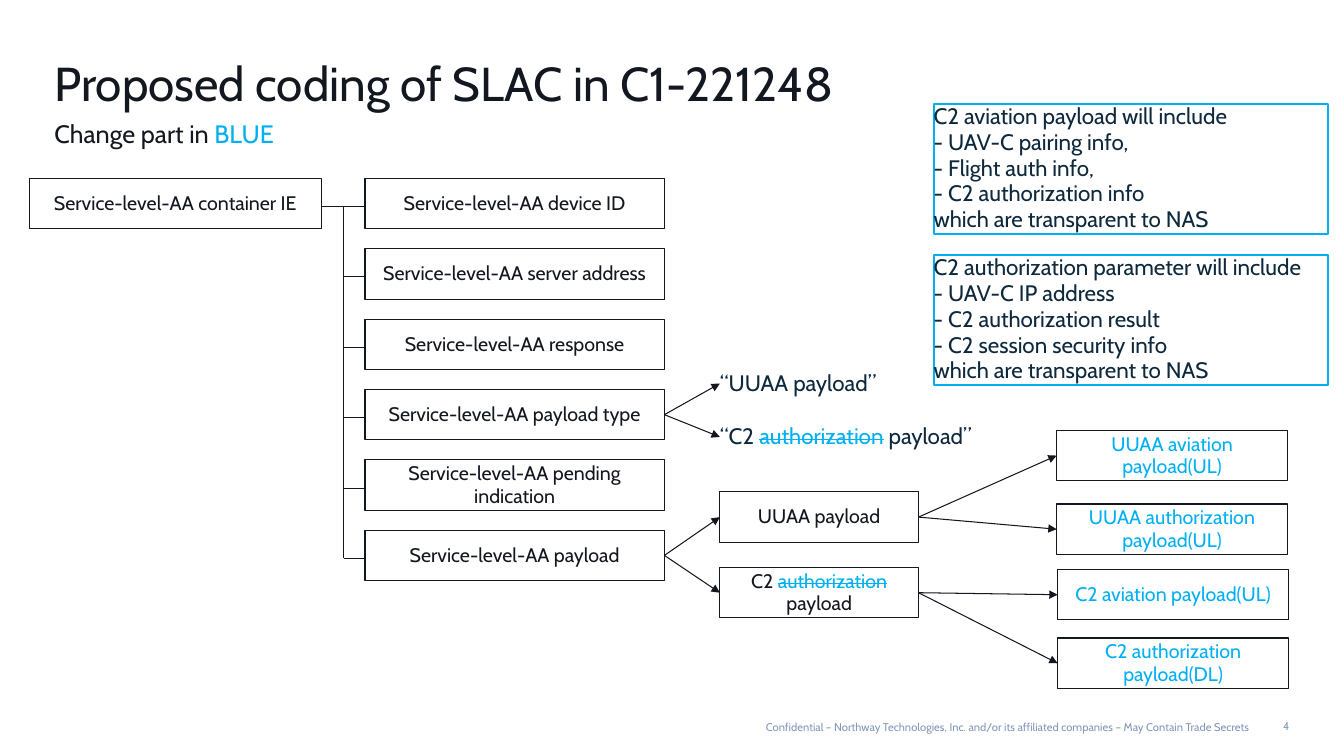
"""Build the slide on the proposed coding of the service-level-AA container."""
from lxml import etree
from pptx import Presentation
from pptx import util as u
from pptx.dml.color import RGBColor
from pptx.enum import shapes, text
from pptx.oxml import ns

INK = RGBColor(0x13, 0x17, 0x1F)
NAVY = RGBColor(0x0E, 0x28, 0x3C)
BLUE = RGBColor(0x00, 0xB0, 0xF0)
GREY = RGBColor(0x84, 0x98, 0xB8)
WHITE = RGBColor(0xFF, 0xFF, 0xFF)
FONT = "Cabin"

TITLE = "Proposed coding of SLAC in C1-221248"
SUBTITLE = "Change part in |BLUE|"
FOOTER = ("Confidential – Northway Technologies, Inc. and/or its affiliated "
          "companies – May Contain Trade Secrets")
PAGE_NUMBER = "4"
CONTAINER = "Service-level-AA container IE"
ELEMENTS = ["device ID", "server address", "response", "payload type",
            "pending indication", "payload"]
PAYLOAD_TYPES = [("“UUAA payload”", 3.68, 2.49),
                 ("“C2 |authorization| payload”", 4.21, 3.1)]
PAYLOADS = [
    ("UUAA payload", 4.88, [("UUAA aviation payload(UL)", 10.48, 4.27),
                            ("UUAA authorization payload(UL)", 10.48, 5.0)]),
    ("C2 |authorization| payload", 5.63, [("C2 aviation payload(UL)", 10.49, 5.65),
                                          ("C2 authorization payload(DL)", 10.49, 6.33)]),
]
NOTES = [
    (1.03, ["C2 aviation payload will include", "- UAV-C pairing info,",
            "- Flight auth info,", "- C2 authorization info",
            "which are transparent to NAS"]),
    (2.53, ["C2 authorization parameter will include", "- UAV-C IP address",
            "- C2 authorization result", "- C2 session security info",
            "which are transparent to NAS"]),
]

BOX_HEIGHT = 0.5
CONTAINER_LEFT, CONTAINER_WIDTH = 0.29, 2.9
ELEMENT_LEFT, ELEMENT_TOP, ELEMENT_WIDTH, ELEMENT_STEP = 3.62, 1.77, 2.97, 0.698
TRUNK_LEFT, BRANCH_DROP = 3.41, 0.28
PAYLOAD_LEFT, PAYLOAD_WIDTH, LEAF_WIDTH = 7.14, 1.97, 2.29

deck = Presentation()
deck.slide_width, deck.slide_height = u.Inches(13.33), u.Inches(7.5)
page = deck.slides.add_slide(deck.slide_layouts[6])


def write(shape, lines, size, color, spacing=0.96, align=text.PP_ALIGN.LEFT,
          strike=True, inset=0, **frame_format):
    """Fill a shape with lines whose parts between bars are blue."""
    frame = shape.text_frame
    settings = {"word_wrap": True, "vertical_anchor": text.MSO_ANCHOR.TOP}
    if not inset:
        settings["auto_size"] = text.MSO_AUTO_SIZE.SHAPE_TO_FIT_TEXT
    for side in ("left", "right"):
        settings["margin_" + side] = u.Inches(inset)
    for side in ("top", "bottom"):
        settings["margin_" + side] = u.Inches(inset / 2)
    for name, value in (settings | frame_format).items():
        setattr(frame, name, value)
    for number, line in enumerate(lines):
        para = frame.add_paragraph() if number else frame.paragraphs[0]
        para.alignment, para.line_spacing = align, spacing
        for index, part in enumerate(line.split("|")):
            if not part:
                continue
            changed = index % 2 == 1
            span = para.add_run()
            span.text = part
            for name, value in {"name": FONT, "size": u.Pt(size)}.items():
                setattr(span.font, name, value)
            span.font.color.rgb = BLUE if changed else color
            if changed and strike:
                span._r.get_or_add_rPr().set("strike", "sngStrike")


def add_text(place, line, size, color, **text_format):
    """Add a text box with one line."""
    box = page.shapes.add_textbox(*map(u.Inches, place))
    write(box, [line], size, color, **text_format)


def add_rectangle(place, line_color, line_width):
    """Add an outlined rectangle without fill."""
    box = page.shapes.add_shape(shapes.MSO_SHAPE.RECTANGLE, *map(u.Inches, place))
    box.shadow.inherit = False
    box.fill.background()
    box.line.color.rgb, box.line.width = line_color, u.Pt(line_width)
    return box


def add_box(left, top, width, label, color=INK):
    """Add a white box of the tree with a centred label."""
    box = add_rectangle((left, top, width, BOX_HEIGHT), INK, 0.85)
    box.fill.solid()
    box.fill.fore_color.rgb = WHITE
    write(box, [label], 14, color, align=text.PP_ALIGN.CENTER, inset=0.1,
          vertical_anchor=text.MSO_ANCHOR.MIDDLE)


def add_line(start, end, arrow=False):
    """Add a thin straight line, with an arrowhead at its end if asked."""
    line = page.shapes.add_connector(shapes.MSO_CONNECTOR.STRAIGHT,
                                     *map(u.Inches, (*start, *end)))
    line.line.color.rgb, line.line.width = INK, u.Pt(0.75)
    if arrow:
        etree.SubElement(line.line._get_or_add_ln(), ns.qn("a:tailEnd"), type="triangle")
    etree.SubElement(line._element.spPr, ns.qn("a:effectLst"))


def middle(top, height=BOX_HEIGHT):
    """Return the vertical centre of a box."""
    return top + height / 2


def main():
    """Place every part and save the deck."""
    right, bottom = text.PP_ALIGN.RIGHT, text.MSO_ANCHOR.BOTTOM
    add_text((12.65, 7.12, 0.14, 0.15), PAGE_NUMBER, 8, GREY, spacing=1.25,
             align=right, vertical_anchor=bottom, word_wrap=False)
    add_text((7.19, 7.15, 5.21, 0.13), FOOTER, 8, GREY, spacing=0.95,
             align=right, vertical_anchor=bottom)
    add_text((0.54, 0.6, 12.23, 0.5), TITLE, 34, INK, spacing=0.84,
             vertical_anchor=bottom)
    add_text((0.54, 1.19, 12.24, 0.3), SUBTITLE, 18, INK, strike=False)

    add_box(CONTAINER_LEFT, ELEMENT_TOP, CONTAINER_WIDTH, CONTAINER)
    tops = [ELEMENT_TOP + ELEMENT_STEP * row for row in range(len(ELEMENTS))]
    element_tops = dict(zip(ELEMENTS, tops))
    for row, (name, top) in enumerate(element_tops.items()):
        add_box(ELEMENT_LEFT, top, ELEMENT_WIDTH, "Service-level-AA " + name)
        start = TRUNK_LEFT if row else CONTAINER_LEFT + CONTAINER_WIDTH
        add_line((start, top + BRANCH_DROP), (ELEMENT_LEFT, top + BRANCH_DROP))
    add_line((TRUNK_LEFT, tops[0] + BRANCH_DROP), (TRUNK_LEFT, tops[-1] + BRANCH_DROP))

    element_right = ELEMENT_LEFT + ELEMENT_WIDTH
    type_exit = (element_right, middle(element_tops["payload type"]))
    for label, top, width in PAYLOAD_TYPES:
        add_text((PAYLOAD_LEFT, top, width, 0.26), label, 16, NAVY)
        add_line(type_exit, (PAYLOAD_LEFT, middle(top, 0.25)), arrow=True)

    payload_exit = (element_right, middle(element_tops["payload"]))
    for label, top, leaves in PAYLOADS:
        add_box(PAYLOAD_LEFT, top, PAYLOAD_WIDTH, label)
        add_line(payload_exit, (PAYLOAD_LEFT, middle(top)), arrow=True)
        for leaf, left, leaf_top in leaves:
            add_box(left, leaf_top, LEAF_WIDTH, leaf, BLUE)
            add_line((PAYLOAD_LEFT + PAYLOAD_WIDTH, middle(top)),
                     (left, middle(leaf_top)), arrow=True)

    for top, lines in NOTES:
        write(add_rectangle((9.26, top, 3.91, 1.29), BLUE, 1.5), lines, 16, NAVY)
    deck.save("out.pptx")


if __name__ == "__main__":
    main()
